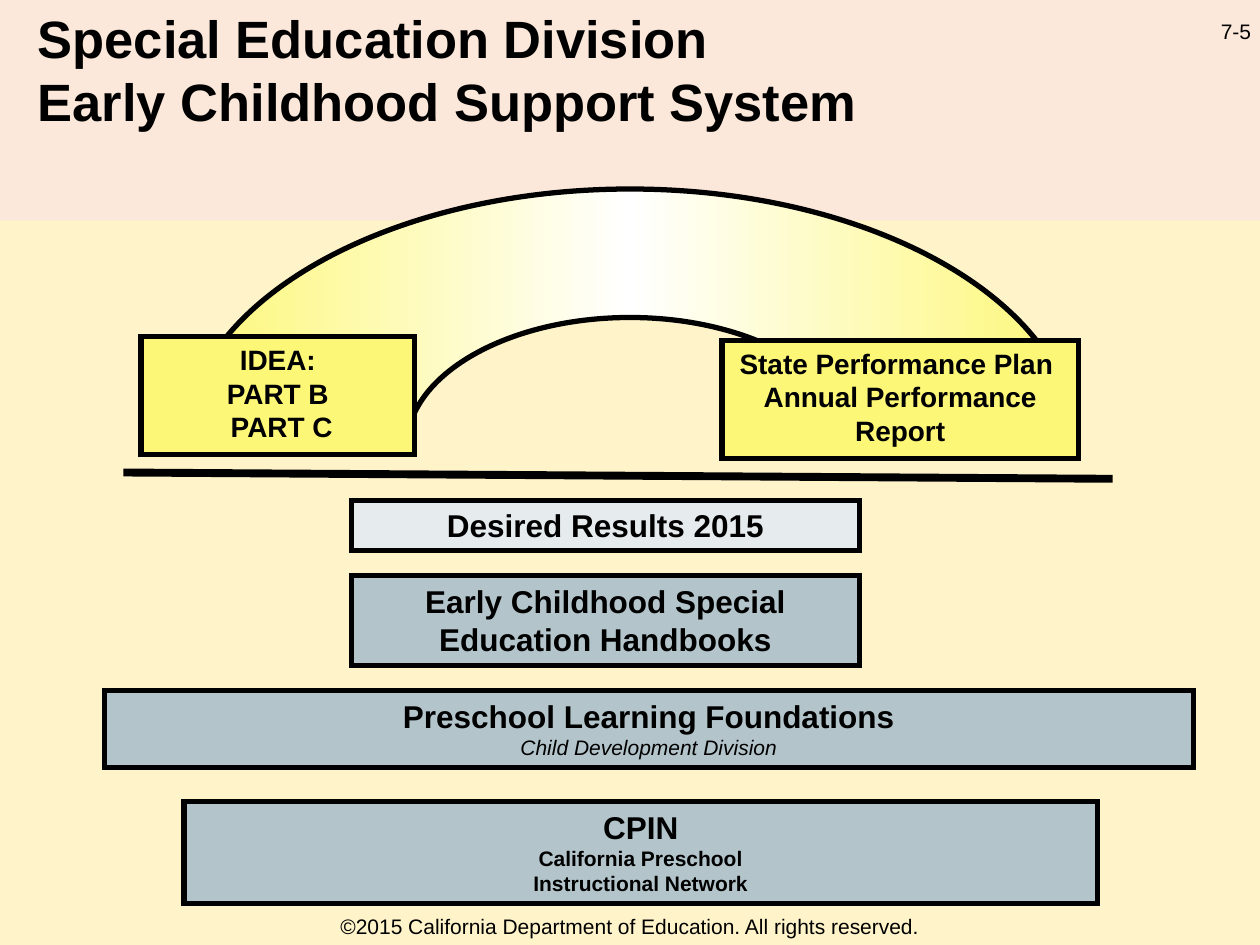
from dataclasses import dataclass

from lxml import etree
from pptx import Presentation
from pptx.dml.color import RGBColor
from pptx.enum import shapes, text
from pptx.oxml import ns
from pptx.util import Inches, Pt

COLORS = {
    "black": "000000", "white": "FFFFFF", "cream": "FEF3C9", "peach": "FBE8DA",
    "yellow": "FDF777", "pale": "E6ECEE", "slate": "B3C5CB",
}
MARGIN = (0.1, 0.05)
FLUSH = (0, 0)
CENTER = text.PP_ALIGN.CENTER
ROUNDNESS = 0.55  # handle length of a quarter ellipse, relative to its radius


@dataclass
class Line:
    words: str
    size: int
    bold: bool = False
    italic: bool = False


@dataclass
class Block:
    left: float
    top: float
    width: float
    height: float
    fill: str
    lines: tuple[Line, ...] = ()
    border: float = 3


def color(name: str) -> RGBColor:
    return RGBColor.from_string(COLORS[name])


def write(shape, lines, align=CENTER, anchor=text.MSO_ANCHOR.TOP, margin=MARGIN) -> None:
    frame = shape.text_frame
    frame.word_wrap = True
    frame.vertical_anchor = anchor
    frame.margin_left = frame.margin_right = Inches(margin[0])
    frame.margin_top = frame.margin_bottom = Inches(margin[1])
    for index, line in enumerate(lines):
        para = frame.add_paragraph() if index else frame.paragraphs[0]
        para.text = line.words
        para.alignment = align
        for span in para.runs:
            span.font.name = "Arial"
            span.font.size = Pt(line.size)
            span.font.bold = line.bold
            span.font.italic = line.italic
            span.font.color.rgb = color("black")


def outline(shape, width: float) -> None:
    """Black line with sharp corners."""
    shape.line.color.rgb = color("black")
    shape.line.width = Pt(width)
    stroke = shape._element.spPr.find(ns.qn("a:ln"))
    etree.SubElement(stroke, ns.qn("a:miter"), lim="800000")


def draw_block(page, block: Block) -> None:
    place = map(Inches, (block.left, block.top, block.width, block.height))
    shape = page.shapes.add_shape(shapes.MSO_SHAPE.RECTANGLE, *place)
    shape.shadow.inherit = False
    shape.fill.solid()
    shape.fill.fore_color.rgb = color(block.fill)
    if block.border:
        outline(shape, block.border)
    else:
        shape.line.fill.background()
    if block.lines:
        write(shape, block.lines)


def draw_text(page, place, line: Line, **layout) -> None:
    box = page.shapes.add_textbox(*map(Inches, place))
    write(box, [line], **layout)


def half_ellipse(radius_x, radius_y, side):
    """Two curves over the top, from side -1 (left) or 1 (right) to the other."""
    reach_x, reach_y = radius_x * ROUNDNESS, radius_y * ROUNDNESS
    start, end = side * radius_x, -side * radius_x
    return [
        ((start, -reach_y), (side * reach_x, -radius_y), (0, -radius_y)),
        ((-side * reach_x, -radius_y), (end, -reach_y), (end, 0)),
    ]


def draw_arch(page, center_x, base, radius_x, radius_y) -> None:
    """A half ring in the frame of its full ellipse; inner radii are half the outer."""
    left, right = Inches(center_x - radius_x), Inches(center_x + radius_x)
    top, bottom = Inches(base - radius_y), Inches(base + radius_y)
    builder = page.shapes.build_freeform(left, top, scale=1.0)
    builder.add_line_segments([(right, top), (right, bottom), (left, bottom)])
    arch = builder.convert_to_shape()
    track = next(arch._element.spPr.iter(ns.qn("a:path")))
    for segment in list(track):
        track.remove(segment)

    def add(command: str, *points) -> None:
        segment = etree.SubElement(track, ns.qn(f"a:{command}"))
        for x, y in points:
            etree.SubElement(segment, ns.qn("a:pt"), x=str(Inches(radius_x + x)),
                             y=str(Inches(radius_y + y)))

    add("moveTo", (-radius_x / 2, 0))
    for curve in half_ellipse(radius_x / 2, radius_y / 2, -1):
        add("cubicBezTo", *curve)
    add("lnTo", (radius_x, 0))
    for curve in half_ellipse(radius_x, radius_y, 1):
        add("cubicBezTo", *curve)
    add("lnTo", (-radius_x / 2, 0))
    add("close")

    arch.shadow.inherit = False
    outline(arch, 3)
    arch.fill.gradient()
    arch.fill.gradient_angle = 0
    stops = next(arch._element.spPr.iter(ns.qn("a:gsLst")))
    for stop in list(stops):
        stops.remove(stop)
    for percent, name in ((0, "yellow"), (50, "white"), (100, "yellow")):
        stop = etree.SubElement(stops, ns.qn("a:gs"), pos=str(percent * 1000))
        etree.SubElement(stop, ns.qn("a:srgbClr"), val=COLORS[name])


def draw_ground(page, start, end) -> None:
    ground = page.shapes.add_connector(
        shapes.MSO_CONNECTOR.STRAIGHT, *map(Inches, start + end))
    outline(ground, 4.5)
    etree.SubElement(ground._element.spPr, ns.qn("a:effectLst"))


BACKDROP = (
    Block(0, 1.69, 10, 5.81, "cream", border=0),
    Block(0, 0, 10, 1.75, "peach", border=0),
)
PILLARS = (
    Block(1.12, 2.67, 2.17, 0.94, "yellow", (
        Line("IDEA:", 16, True), Line(" PART B ", 16, True), Line(" PART C", 16, True))),
    Block(5.73, 2.7, 2.83, 0.94, "yellow", (
        Line("State Performance Plan ", 16, True),
        Line("Annual Performance Report", 16, True))),
)
FOUNDATIONS = (
    Block(2.79, 3.97, 4.03, 0.4, "pale", (Line("Desired Results 2015", 18, True),)),
    Block(2.79, 4.57, 4.03, 0.71, "slate", (
        Line("Early Childhood Special Education Handbooks", 18, True),)),
    Block(0.83, 5.48, 8.64, 0.61, "slate", (
        Line("Preschool Learning Foundations", 18, True),
        Line("Child Development Division", 12, italic=True))),
    Block(1.46, 6.36, 7.25, 0.81, "slate", (
        Line("CPIN", 18, True), Line("California Preschool", 12, True),
        Line("Instructional Network", 12, True))),
)


def main() -> None:
    deck = Presentation()
    deck.slide_width, deck.slide_height = Inches(10), Inches(7.5)
    page = deck.slides.add_slide(deck.slide_layouts[6])

    for block in BACKDROP:
        draw_block(page, block)
    draw_text(page, (0, 7.2, 10, 0.3), Line(
        "©2015 California Department of Education. All rights reserved.", 12))
    draw_text(page, (9.33, 0.1, 0.6, 0.25), Line("7-5", 12), margin=FLUSH,
              align=text.PP_ALIGN.RIGHT, anchor=text.MSO_ANCHOR.BOTTOM)
    draw_arch(page, 5, 3.54, 3.54, 2.04)
    for block in PILLARS:
        draw_block(page, block)
    draw_ground(page, (0.98, 3.75), (8.83, 3.8))
    for block in FOUNDATIONS:
        draw_block(page, block)
    draw_text(page, (0.3, 0, 9.7, 1.1), Line(
        "Special Education Division\nEarly Childhood Support System", 30, True),
        margin=FLUSH, align=text.PP_ALIGN.LEFT, anchor=text.MSO_ANCHOR.MIDDLE)
    deck.save("out.pptx")


if __name__ == "__main__":
    main()
